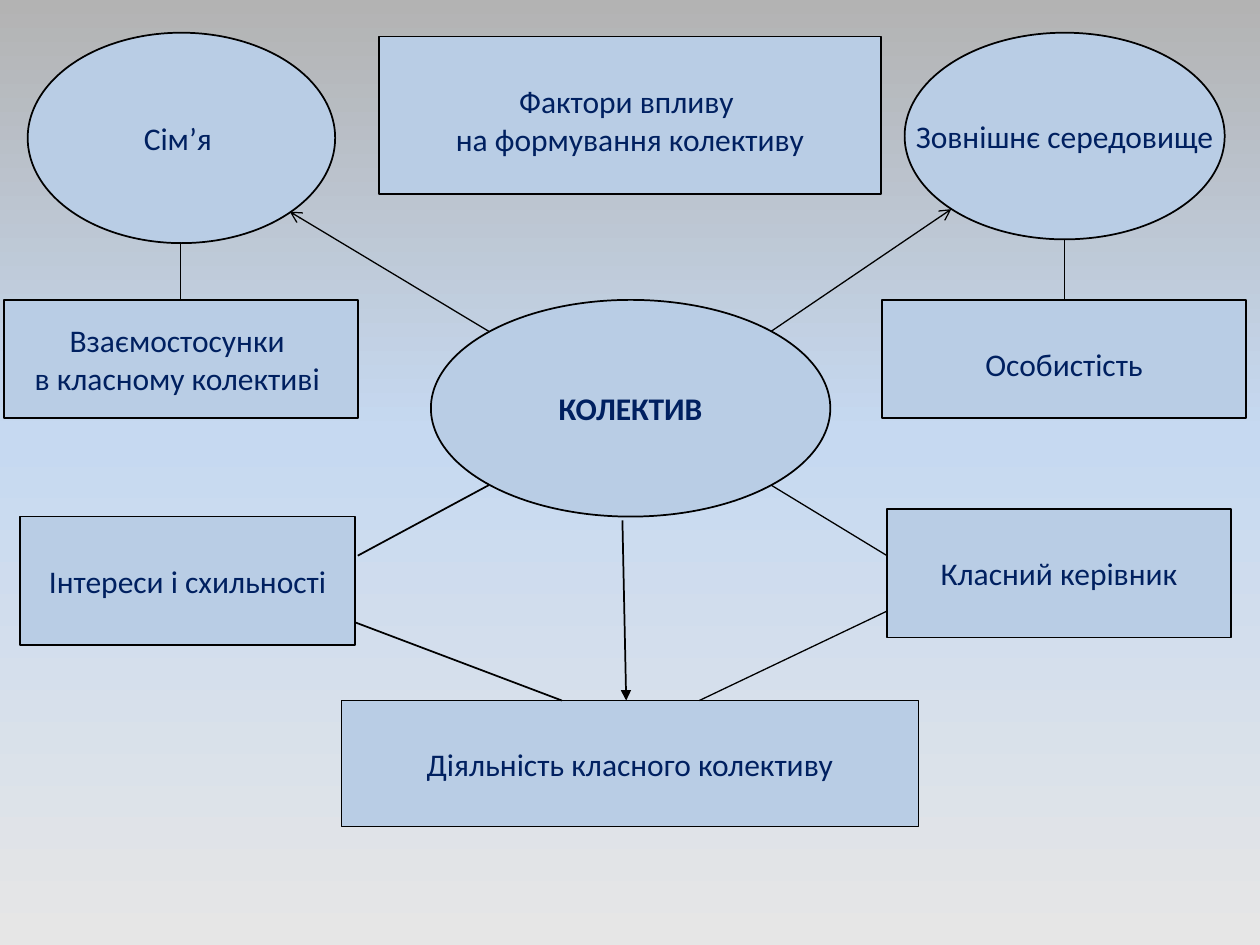
"""Build a slide that maps the factors shaping a class collective."""
from copy import deepcopy

from lxml import etree
from pptx import Presentation
from pptx.dml.color import RGBColor
from pptx.enum.shapes import MSO_CONNECTOR, MSO_SHAPE
from pptx.enum.text import MSO_ANCHOR, MSO_AUTO_SIZE, PP_ALIGN
from pptx.oxml.ns import qn
from pptx.util import Inches, Pt

OVAL, RECT = MSO_SHAPE.OVAL, MSO_SHAPE.RECTANGLE
STRAIGHT = MSO_CONNECTOR.STRAIGHT
TOP, MIDDLE = MSO_ANCHOR.TOP, MSO_ANCHOR.MIDDLE
CENTER = PP_ALIGN.CENTER
NO_FIT = MSO_AUTO_SIZE.NONE

BLACK = RGBColor(0x00, 0x00, 0x00)
NAVY = RGBColor(0x00, 0x20, 0x60)
PALE_BLUE = RGBColor(0xB9, 0xCD, 0xE5)
BACKDROP = [
    (0, RGBColor(0xB3, 0xB3, 0xB3)),
    (0.46, RGBColor(0xC6, 0xD9, 0xF1)),
    (1, RGBColor(0xE6, 0xE6, 0xE6)),
]
FONT = "Calibri"
FONT_SIZE = Pt(18)
LOWERED_MARGIN = Inches(0.36)

TITLE_PLACE = (3.01, 0.29, 3.98, 1.25)
TITLE_LINES = ["Фактори впливу ", "на формування колективу"]

FACTORS = [
    (OVAL, (0.22, 0.26, 2.44, 1.67), ["Сім’я "], MIDDLE, False),
    (OVAL, (7.18, 0.26, 2.54, 1.64), ["Зовнішнє середовище"], MIDDLE, False),
    (OVAL, (3.42, 2.38, 3.17, 1.72), ["КОЛЕКТИВ"], MIDDLE, True),
    (RECT, (0.03, 2.38, 2.81, 0.94),
     ["Взаємостосунки ", "в класному колективі "], MIDDLE, False),
    (RECT, (0.16, 4.1, 2.66, 1.02), ["Інтереси і схильності"], MIDDLE, False),
    (RECT, (7.04, 4.04, 2.73, 1.02), ["Класний керівник"], MIDDLE, False),
    (RECT, (2.71, 5.56, 4.58, 1), ["Діяльність класного колективу"], MIDDLE, False),
    (RECT, (7, 2.38, 2.89, 0.94), ["Особистість"], TOP, False),
]

LINKS = [
    ((4.94, 4.13), (4.97, 5.56), 1, "triangle"),
    ((2.82, 4.94), (4.46, 5.56), 1, None),
    ((3.88, 3.85), (2.84, 4.41), 1, None),
    ((6.12, 2.63), (7.55, 1.66), 0.75, "arrow"),
    ((3.88, 2.63), (2.3, 1.68), 0.75, "arrow"),
    ((1.43, 1.92), (1.43, 2.38), 0.75, None),
    ((8.45, 1.9), (8.45, 2.38), 0.75, None),
    ((7.04, 4.85), (5.55, 5.56), 0.75, None),
    ((6.12, 3.85), (7.04, 4.41), 0.75, None),
]


def paint_background(page):
    fill = page.background.fill
    fill.gradient()
    fill.gradient_angle = 270
    stop_list = next(page.element.iter(qn("a:gsLst")))
    stop_list.insert(1, deepcopy(stop_list[0]))
    for stop, (position, color) in zip(fill.gradient_stops, BACKDROP):
        stop.position = position
        stop.color.rgb = color


def format_box(box, lines, anchor, bold):
    box.fill.solid()
    box.fill.fore_color.rgb = PALE_BLUE
    box.line.color.rgb = BLACK
    box.line.width = Pt(1)
    frame = box.text_frame
    frame.auto_size = NO_FIT
    frame.word_wrap = False
    frame.vertical_anchor = anchor
    if anchor == TOP:
        frame.margin_top = LOWERED_MARGIN
    for index, line in enumerate(lines):
        para = frame.add_paragraph() if index else frame.paragraphs[0]
        para.alignment = CENTER
        span = para.add_run()
        span.text = line
        span.font.name = FONT
        span.font.size = FONT_SIZE
        span.font.bold = bold
        span.font.color.rgb = NAVY


def add_title(page):
    title = page.shapes.title
    title.left, title.top, title.width, title.height = map(Inches, TITLE_PLACE)
    format_box(title, TITLE_LINES, TOP, False)


def add_factor(page, kind, place, lines, anchor, bold):
    box = page.shapes.add_shape(kind, *map(Inches, place))
    box.shadow.inherit = False
    format_box(box, lines, anchor, bold)


def add_link(page, start, end, width, arrowhead):
    link = page.shapes.add_connector(STRAIGHT, *map(Inches, start + end))
    link.line.color.rgb = BLACK
    link.line.width = Pt(width)
    if arrowhead:
        outline = link.line._get_or_add_ln()
        etree.SubElement(outline, qn("a:tailEnd"), type=arrowhead)
    etree.SubElement(link.element.spPr, qn("a:effectLst"))


def main():
    deck = Presentation()
    deck.slide_width, deck.slide_height = Inches(10), Inches(7.5)
    page = deck.slides.add_slide(deck.slide_layouts[5])
    paint_background(page)
    add_title(page)
    for factor in FACTORS:
        add_factor(page, *factor)
    for link in LINKS:
        add_link(page, *link)
    deck.save("out.pptx")


if __name__ == "__main__":
    main()
